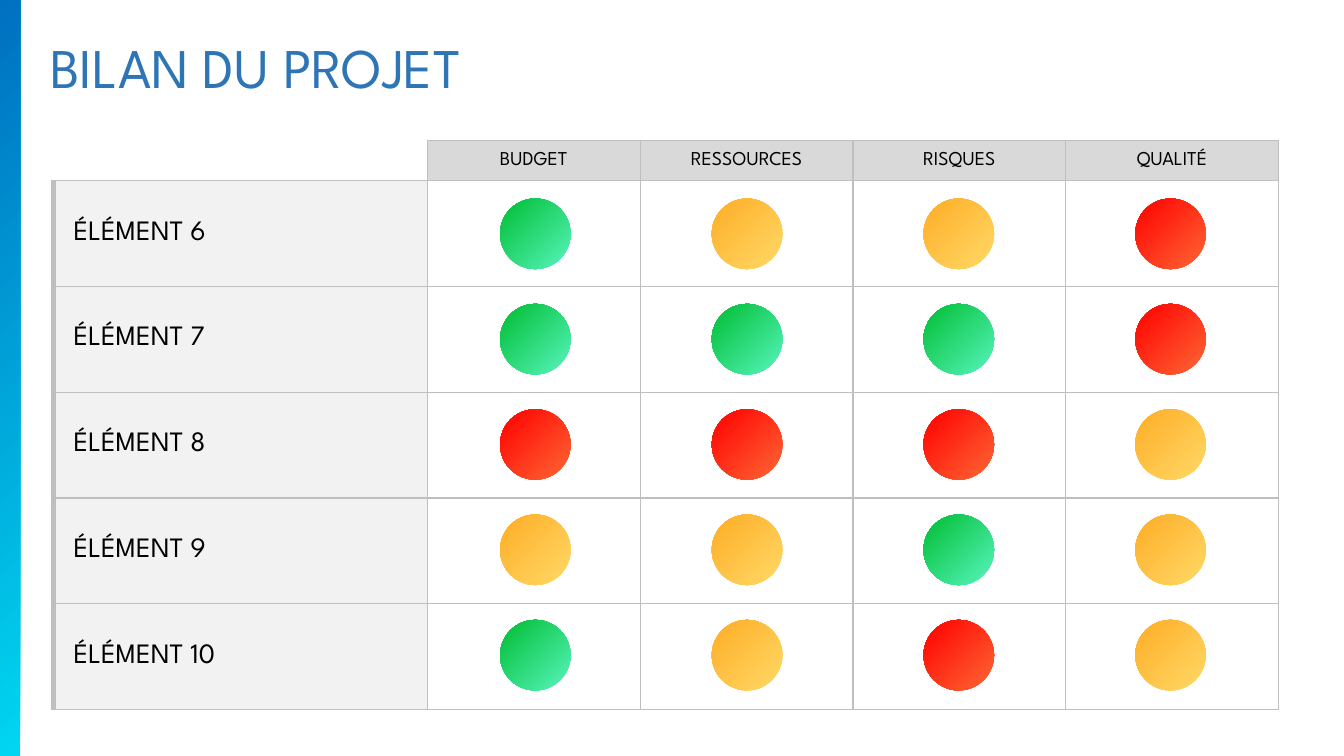
"""Build a project status slide with a table of traffic-light indicators."""
from pptx import Presentation
from pptx.dml.color import RGBColor
from pptx.enum.shapes import MSO_SHAPE
from pptx.enum.text import MSO_ANCHOR, PP_ALIGN
from pptx.oxml.ns import qn
from pptx.util import Inches, Pt
from lxml.etree import SubElement

TITLE = "BILAN DU PROJET"
CRITERIA = ["BUDGET", "RESSOURCES", "RISQUES", "QUALITÉ"]
RATINGS = {
    "ÉLÉMENT 6": ["green", "amber", "amber", "red"],
    "ÉLÉMENT 7": ["green", "green", "green", "red"],
    "ÉLÉMENT 8": ["red", "red", "red", "amber"],
    "ÉLÉMENT 9": ["amber", "amber", "green", "amber"],
    "ÉLÉMENT 10": ["green", "amber", "red", "amber"],
}
GRADIENTS = {
    "green": ("58F5BE", "00BD32"),
    "amber": ("FFD966", "FEAD27"),
    "red": ("FE6735", "FF0000"),
    "band": ("00D6F1", "0070C0"),
}
FONT = "League Spartan"
BORDER = "BFBFBF"
GRID_LEFT, GRID_TOP = 0.53, 1.39
LABEL_WIDTH, CRITERION_WIDTH = 3.71, 2.11
HEADER_HEIGHT, ITEM_HEIGHT = 0.4, 1.05
LIGHT_LEFT, LIGHT_TOP, LIGHT_SIZE = 4.96, 1.97, 0.7
LIGHT_STEP_X, LIGHT_STEP_Y = 2.1, 1.045
CELL_FORMATS = {
    "header": {"fill": "D9D9D9", "size": 14, "align": PP_ALIGN.CENTER, "inset": 0.06},
    "label": {"fill": "F2F2F2", "size": 20, "align": PP_ALIGN.LEFT, "inset": 0.2},
    "rating": {"fill": "FFFFFF", "size": 14, "align": PP_ALIGN.CENTER, "inset": 0.06},
}


def color(code):
    return RGBColor.from_string(code)


def write(frame, words, size, code, align=PP_ALIGN.LEFT):
    paragraph = frame.paragraphs[0]
    paragraph.alignment = align
    run = paragraph.add_run()
    run.text = words
    for key, value in {"name": FONT, "size": Pt(size)}.items():
        setattr(run.font, key, value)
    run.font.color.rgb = color(code)


def add_gradient_shape(shapes, preset, left, top, width, height, gradient):
    shape = shapes.add_shape(preset, Inches(left), Inches(top), Inches(width), Inches(height))
    shape.shadow.inherit = False
    shape.line.fill.background()
    shape.fill.gradient()
    shape.fill.gradient_angle = 135
    for stop, code in zip(shape.fill.gradient_stops, GRADIENTS[gradient]):
        stop.color.rgb = color(code)


def set_borders(cell, widths):
    properties = cell._tc.get_or_add_tcPr()
    for side in "LRTB":
        width = widths.get(side, 0)
        line = SubElement(properties, qn(f"a:ln{side}"), w=str(Pt(width)))
        if width:
            fill = SubElement(line, qn("a:solidFill"))
            SubElement(fill, qn("a:srgbClr"), val=BORDER)
        else:
            SubElement(line, qn("a:noFill"))


def fill_cell(cell, role, words=""):
    style = CELL_FORMATS[role]
    set_borders(cell, {"L": 4.5 if role == "label" else 1, "R": 1, "T": 1, "B": 1})
    cell.fill.solid()
    cell.fill.fore_color.rgb = color(style["fill"])
    layout = {
        "vertical_anchor": MSO_ANCHOR.MIDDLE,
        "margin_left": Inches(style["inset"]),
        "margin_right": Inches(0.06),
        "margin_top": 0,
        "margin_bottom": 0,
    }
    for key, value in layout.items():
        setattr(cell, key, value)
    if words:
        write(cell.text_frame, words, style["size"], "000000", style["align"])


def add_grid(shapes):
    widths = [LABEL_WIDTH] + [CRITERION_WIDTH] * len(CRITERIA)
    heights = [HEADER_HEIGHT] + [ITEM_HEIGHT] * len(RATINGS)
    grid = shapes.add_table(
        len(heights), len(widths), Inches(GRID_LEFT), Inches(GRID_TOP),
        Inches(sum(widths)), Inches(sum(heights)),
    ).table
    grid.first_row = grid.horz_banding = False
    for column, width in zip(grid.columns, widths):
        column.width = Inches(width)
    for row, height in zip(grid.rows, heights):
        row.height = Inches(height)
    corner = grid.cell(0, 0)
    set_borders(corner, {"R": 1, "B": 1})
    corner.fill.background()
    corner.margin_top = corner.margin_bottom = 0
    for column, criterion in enumerate(CRITERIA, 1):
        fill_cell(grid.cell(0, column), "header", criterion)
    for row, item in enumerate(RATINGS, 1):
        fill_cell(grid.cell(row, 0), "label", item)
        for column in range(1, len(widths)):
            fill_cell(grid.cell(row, column), "rating")


def add_lights(shapes):
    for row, ratings in enumerate(RATINGS.values()):
        for column, rating in enumerate(ratings):
            add_gradient_shape(
                shapes, MSO_SHAPE.OVAL,
                LIGHT_LEFT + column * LIGHT_STEP_X, LIGHT_TOP + row * LIGHT_STEP_Y,
                LIGHT_SIZE, LIGHT_SIZE, rating,
            )


def main():
    deck = Presentation()
    deck.slide_width, deck.slide_height = Inches(13.33), Inches(7.5)
    shapes = deck.slides.add_slide(deck.slide_layouts[6]).shapes
    heading = shapes.add_textbox(Inches(0.4), Inches(0.27), Inches(6.61), Inches(0.77))
    heading.text_frame.word_wrap = True
    write(heading.text_frame, TITLE, 40, "2E75B6")
    add_gradient_shape(shapes, MSO_SHAPE.RECTANGLE, 0, 0, 0.2, 7.5, "band")
    add_grid(shapes)
    add_lights(shapes)
    deck.save("out.pptx")


if __name__ == "__main__":
    main()
